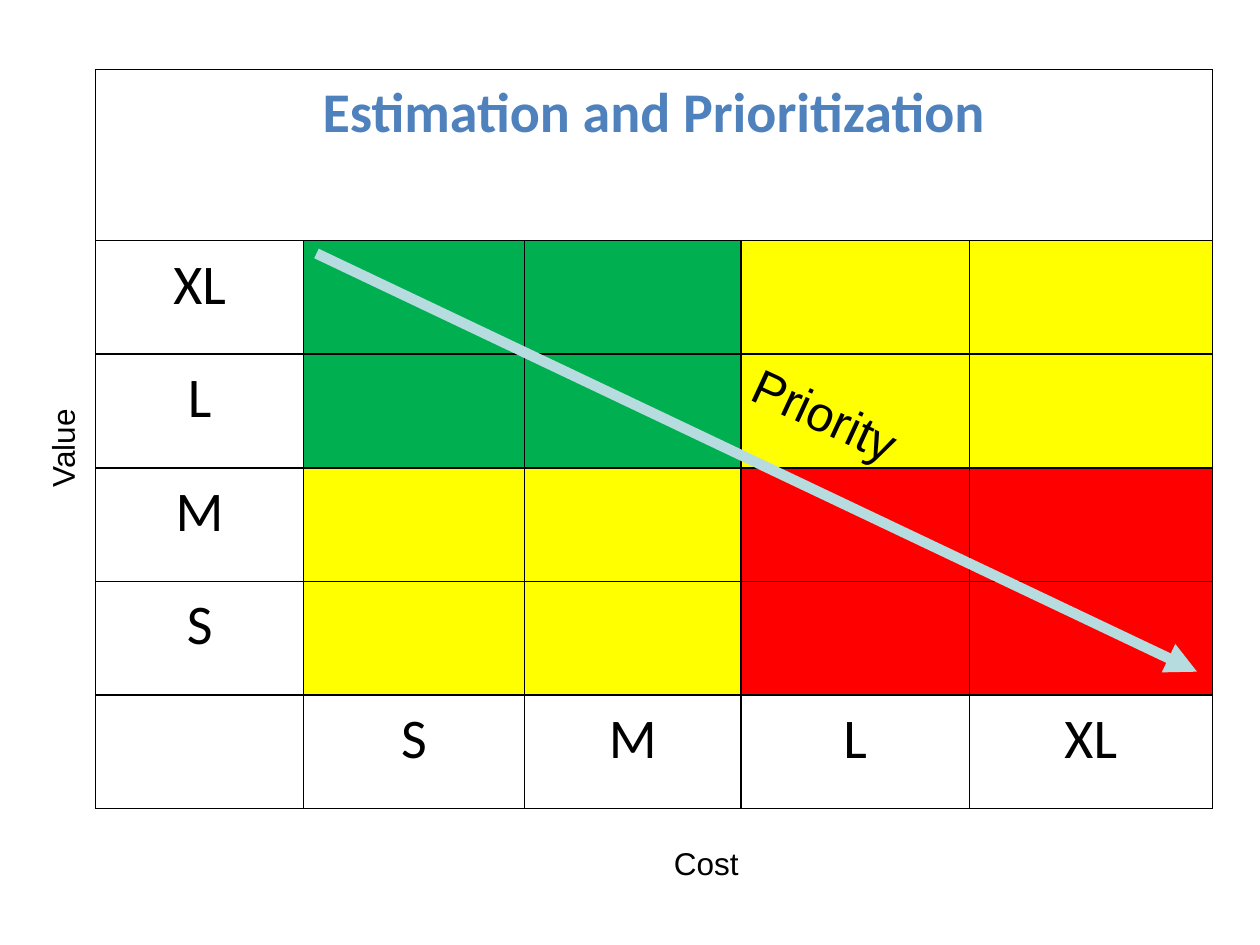
from lxml.etree import SubElement
from pptx import Presentation
from pptx.dml.color import RGBColor
from pptx.enum.shapes import MSO_CONNECTOR
from pptx.enum.text import MSO_ANCHOR, PP_ALIGN
from pptx.oxml.ns import qn
from pptx.util import Cm, Pt

BLACK = RGBColor(0x00, 0x00, 0x00)
TITLE_BLUE = RGBColor(0x4F, 0x81, 0xBD)
GREEN = RGBColor(0x00, 0xB0, 0x50)
YELLOW = RGBColor(0xFF, 0xFF, 0x00)
RED = RGBColor(0xFF, 0x00, 0x00)
ARROW_TEAL = RGBColor(0xB6, 0xDC, 0xDF)

SIZES = ["S", "M", "L", "XL"]
COLUMN_WIDTHS = [4.19, 4.45, 4.37, 4.6, 4.9]
TITLE_HEIGHT, ROW_HEIGHT = 3.45, 2.29
ZONES = [[GREEN, YELLOW], [YELLOW, RED]]


def write(paragraph, text, color=BLACK, **font_format):
    paragraph.alignment = PP_ALIGN.CENTER
    run = paragraph.add_run()
    run.text = text
    run.font.color.rgb = color
    for key, value in font_format.items():
        setattr(run.font, key, value)


def outline(cell):
    properties = cell._tc.get_or_add_tcPr()
    for side in ("lnL", "lnR", "lnT", "lnB"):
        border = SubElement(properties, qn(f"a:{side}"), w=str(Pt(1)))
        fill = SubElement(border, qn("a:solidFill"))
        SubElement(fill, qn("a:srgbClr"), val=str(BLACK))


def fill_cell(cell, text="", color=BLACK, bold=False):
    margins = {"margin_left": Cm(0.18), "margin_right": Cm(0.18),
               "margin_top": 0, "margin_bottom": 0,
               "vertical_anchor": MSO_ANCHOR.TOP}
    for key, value in margins.items():
        setattr(cell, key, value)
    if text:
        paragraph = cell.text_frame.paragraphs[0]
        paragraph.line_spacing = 1.15
        write(paragraph, text, color, name="Calibri", size=Pt(32), bold=bold)


def add_matrix(slide, left, top, width, height):
    matrix = slide.shapes.add_table(
        6, 5, Cm(left), Cm(top), Cm(width), Cm(height)).table
    matrix.first_row = matrix.horz_banding = False
    for column, column_width in zip(matrix.columns, COLUMN_WIDTHS):
        column.width = Cm(column_width)
    for index, row in enumerate(matrix.rows):
        row.height = Cm(ROW_HEIGHT if index else TITLE_HEIGHT)
    for cell in matrix.iter_cells():
        outline(cell)
        cell.fill.background()

    title = matrix.cell(0, 0)
    title.merge(matrix.cell(0, 4))
    fill_cell(title, "Estimation and Prioritization", TITLE_BLUE, bold=True)
    title.text_frame.paragraphs[0].space_before = Pt(10)
    for index, size in enumerate(SIZES):
        fill_cell(matrix.cell(4 - index, 0), size)
        fill_cell(matrix.cell(5, index + 1), size)
    for row in range(4):
        for column in range(4):
            zone = matrix.cell(row + 1, column + 1)
            zone.fill.solid()
            zone.fill.fore_color.rgb = ZONES[row // 2][column // 2]


def add_label(slide, text, left, top, width, height, size=18, rotation=0):
    label = slide.shapes.add_textbox(Cm(left), Cm(top), Cm(width), Cm(height))
    label.rotation = rotation
    label.text_frame.word_wrap = True
    write(label.text_frame.paragraphs[0], text, name="Arial", size=Pt(size))


def add_priority_arrow(slide, left, top, width, height):
    arrow = slide.shapes.add_connector(
        MSO_CONNECTOR.STRAIGHT, Cm(left), Cm(top),
        Cm(left + width), Cm(top + height))
    arrow.line.color.rgb = ARROW_TEAL
    arrow.line.width = Pt(6)
    SubElement(arrow.line._get_or_add_ln(), qn("a:tailEnd"), type="triangle")
    SubElement(arrow._element.spPr, qn("a:effectLst"))


def main():
    deck = Presentation()
    deck.slide_width, deck.slide_height = Cm(25.4), Cm(19.05)
    slide = deck.slides.add_slide(deck.slide_layouts[6])
    add_matrix(slide, 1.93, 1.4, sum(COLUMN_WIDTHS), TITLE_HEIGHT + 5 * ROW_HEIGHT)
    add_label(slide, "Cost", 8.64, 16.89, 11.2, 1.02)
    add_label(slide, "Value", -4.34, 8.53, 11.2, 1.02, rotation=270)
    add_priority_arrow(slide, 6.38, 5.11, 17.75, 8.43)
    add_label(slide, "Priority", 12.57, 7.62, 8.15, 1.45, size=28, rotation=24.8)
    deck.save("out.pptx")


if __name__ == "__main__":
    main()
